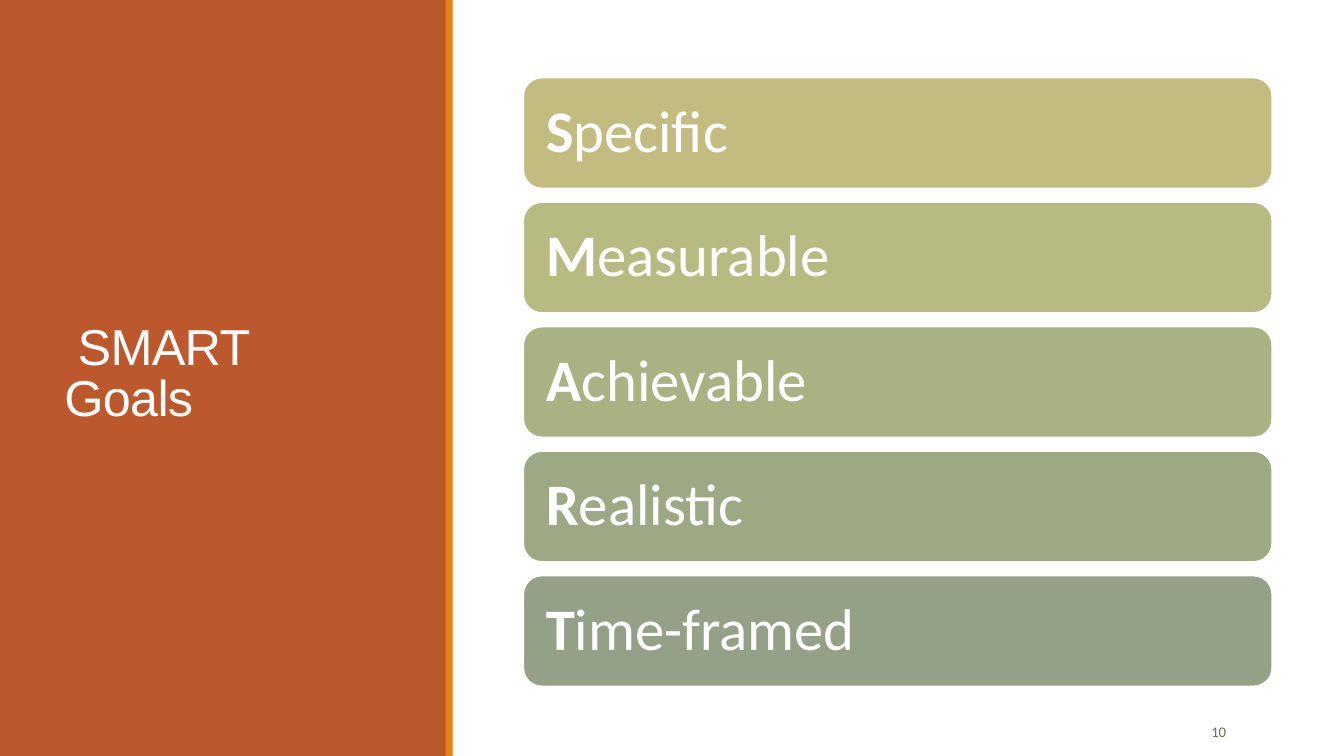
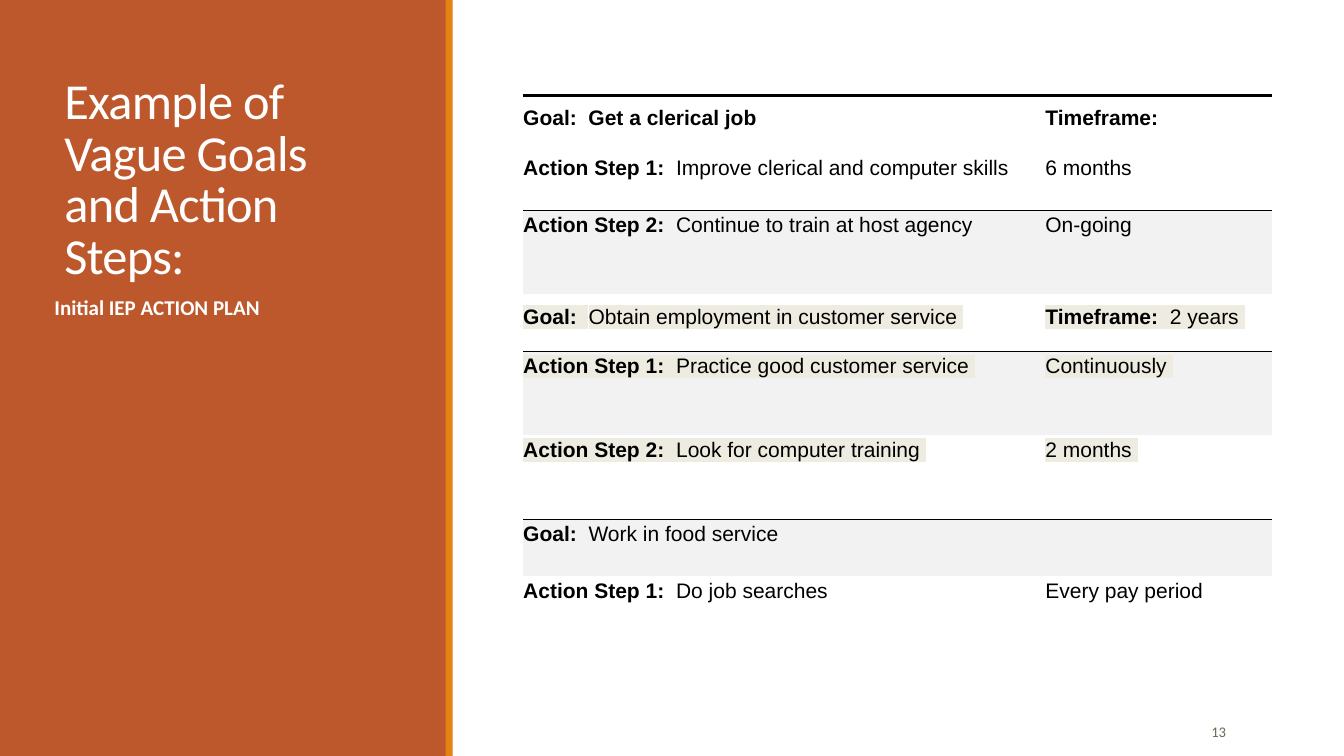
from dataclasses import dataclass

from lxml.etree import SubElement
from pptx import Presentation
from pptx.dml.color import RGBColor
from pptx.enum.shapes import MSO_SHAPE
from pptx.enum.text import MSO_ANCHOR, PP_ALIGN
from pptx.oxml import parse_xml
from pptx.oxml.ns import nsdecls, qn
from pptx.util import Inches, Pt


@dataclass(frozen=True)
class Theme:
    panel: str = "BD582C"
    accent: str = "E48312"
    white: str = "FFFFFF"
    black: str = "000000"
    page_number: str = "637052"
    shaded: str = "F2F2F2"
    highlight: str = "EEECE1"
    bars: tuple = ("C2BC80", "B7BA81", "A8B283", "9DA985", "94A088")
    body_font: str = "Calibri"
    plain_font: str = "Arial"
    title_size: float = 36
    bar_size: float = 42
    text_size: float = 15
    number_size: float = 10.5
    bar_line: float = 1.25
    thick_line: float = 2.25
    thin_line: float = 0.5


@dataclass(frozen=True)
class Box:
    """Left, top, width and height in hundredths of the slide's size."""
    left: float
    top: float
    width: float
    height: float

    def emu(self):
        return (int(self.left * COLUMN), int(self.top * ROW),
                int(self.width * COLUMN), int(self.height * ROW))


THEME = Theme()
SLIDE_WIDTH, SLIDE_HEIGHT = Inches(13.33), Inches(7.5)
COLUMN, ROW = SLIDE_WIDTH / 100, SLIDE_HEIGHT / 100

PANEL = Box(0, 0, 33.23, 100)
STRIPE = Box(33.16, 0, 0.53, 100)
FULL_TITLE = Box(4.05, 7.6, 25.28, 84.13)
TOP_TITLE = Box(4.05, 7.6, 25.28, 30.67)
SUBTITLE = Box(4.05, 38.67, 25.28, 48.67)
PAGE_NUMBER = Box(83.05, 94.13, 8.92, 5.33)
BAR_AREA = Box(38.93, 10.27, 55.73, 80.53)
TABLE_AREA = Box(38.93, 12.67, 55.73, 74.67)

GOAL_WORDS = ("Specific", "Measurable", "Achievable", "Realistic", "Time-framed")

SHORT, TALL = 0.57, 0.83
COLUMN_WEIGHTS = (5.18, 2.25)
# Row weight, anchor, highlighted, then (bold, regular) text for each cell
PLAN_ROWS = (
    (SHORT, MSO_ANCHOR.BOTTOM, False, ("Goal:  Get a clerical job", ""), ("Timeframe:", "")),
    (SHORT, MSO_ANCHOR.TOP, False,
     ("Action Step 1:  ", "Improve clerical and computer skills"), ("", "6 months")),
    (TALL, MSO_ANCHOR.TOP, False,
     ("Action Step 2:  ", "Continue to train at host agency"), ("", "On-going")),
    (SHORT, MSO_ANCHOR.BOTTOM, True,
     ("Goal:  ", "Obtain employment in customer service "), ("Timeframe:  ", "2 years ")),
    (TALL, MSO_ANCHOR.TOP, True,
     ("Action Step 1:  ", "Practice good customer service "), ("", "Continuously ")),
    (TALL, MSO_ANCHOR.TOP, True,
     ("Action Step 2:  ", "Look for computer training "), ("", "2 months ")),
    (SHORT, MSO_ANCHOR.TOP, False, ("Goal:  ", "Work in food service"), ("", "")),
    (TALL, MSO_ANCHOR.TOP, False, ("Action Step 1:  ", "Do job searches"), ("", "Every pay period")),
)


def color(value):
    return RGBColor.from_string(value)


def format_run(run, size, font, text_color, bold=False):
    run.font.size = Pt(size)
    run.font.name = font
    run.font.bold = bold
    run.font.color.rgb = color(text_color)


def add_runs(paragraph, parts, size, font, text_color):
    """Write a bold part followed by a regular part."""
    for text, bold in zip(parts, (True, False)):
        if text:
            run = paragraph.add_run()
            run.text = text
            format_run(run, size, font, text_color, bold)


def add_block(slide, box, fill, shape_type=MSO_SHAPE.RECTANGLE):
    shape = slide.shapes.add_shape(shape_type, *box.emu())
    shape.shadow.inherit = False
    shape.fill.solid()
    shape.fill.fore_color.rgb = color(fill)
    shape.line.fill.background()
    return shape


def add_text(slide, box, text, size, text_color=THEME.white, font=THEME.body_font,
             bold=False, anchor=MSO_ANCHOR.TOP, spacing=None):
    frame = slide.shapes.add_textbox(*box.emu()).text_frame
    frame.word_wrap = True
    frame.vertical_anchor = anchor
    frame.text = text
    paragraph = frame.paragraphs[0]
    paragraph.line_spacing = spacing
    format_run(paragraph.runs[0], size, font, text_color, bold)
    return frame


def add_frame(presentation, number):
    """Start a slide with the side panel, its stripe and the page number."""
    slide = presentation.slides.add_slide(presentation.slide_layouts[6])
    add_block(slide, PANEL, THEME.panel)
    add_block(slide, STRIPE, THEME.accent)
    frame = add_text(slide, PAGE_NUMBER, number, THEME.number_size,
                     THEME.page_number, anchor=MSO_ANCHOR.MIDDLE)
    frame.paragraphs[0].alignment = PP_ALIGN.RIGHT
    frame.paragraphs[0].space_after = Pt(6)
    return slide


def add_title(slide, box, text, font, anchor):
    frame = add_text(slide, box, text, THEME.title_size, font=font,
                     anchor=anchor, spacing=0.85)
    frame.paragraphs[0].runs[0].font._element.set("spc", "-50")


def add_bars(slide, area, words, gap=1.8):
    """Stack equal rounded bars, each with its initial in bold."""
    height = (area.height - gap * (len(words) - 1)) / len(words)
    for index, (word, fill) in enumerate(zip(words, THEME.bars)):
        box = Box(area.left, area.top + index * (height + gap), area.width, height)
        bar = add_block(slide, box, fill, MSO_SHAPE.ROUNDED_RECTANGLE)
        bar.line.color.rgb = color(THEME.white)
        bar.line.width = Pt(THEME.bar_line)
        frame = bar.text_frame
        frame.word_wrap = True
        frame.vertical_anchor = MSO_ANCHOR.MIDDLE
        frame.margin_left = frame.margin_right = Inches(0.17)
        paragraph = frame.paragraphs[0]
        paragraph.alignment = PP_ALIGN.LEFT
        paragraph.line_spacing = 0.9
        add_runs(paragraph, (word[0], word[1:]), THEME.bar_size,
                 THEME.body_font, THEME.white)


def set_borders(cell, top, bottom):
    """Draw the top and bottom lines of the given widths; zero means no line."""
    properties = cell._tc.get_or_add_tcPr()
    for side, width in (("L", 0), ("R", 0), ("T", top), ("B", bottom)):
        line = SubElement(properties, qn(f"a:ln{side}"), w=str(int(Pt(width))))
        if width:
            fill = SubElement(line, qn("a:solidFill"))
            SubElement(fill, qn("a:srgbClr"), val=THEME.black)
        else:
            SubElement(line, qn("a:noFill"))


def highlight_run(run):
    fill = run.font._element.find(qn("a:solidFill"))
    fill.addnext(parse_xml(f'<a:highlight {nsdecls("a")}>'
                           f'<a:srgbClr val="{THEME.highlight}"/></a:highlight>'))


def fill_cell(cell, parts, anchor, highlighted):
    cell.vertical_anchor = anchor
    cell.margin_left, cell.margin_right = 0, Inches(0.08)
    cell.margin_top, cell.margin_bottom = Inches(0.03), Inches(0.23)
    paragraph = cell.text_frame.paragraphs[0]
    add_runs(paragraph, parts, THEME.text_size, THEME.plain_font, THEME.black)
    if highlighted:
        for run in paragraph.runs:
            highlight_run(run)


def add_plan_table(slide, area, rows):
    left, top, width, height = area.emu()
    table = slide.shapes.add_table(len(rows), len(COLUMN_WEIGHTS),
                                   left, top, width, height).table
    table.first_row = table.horz_banding = False
    for column, weight in zip(table.columns, COLUMN_WEIGHTS):
        column.width = int(width * weight / sum(COLUMN_WEIGHTS))
    total_weight = sum(row[0] for row in rows)

    # Every second row after the first pair is shaded under a thin line
    shaded = [index > 0 and index % 2 == 0 for index in range(len(rows))]
    lines = [THEME.thin_line if flag else 0 for flag in shaded] + [0]
    lines[0] = THEME.thick_line
    for index, (weight, anchor, highlighted, *texts) in enumerate(rows):
        table.rows[index].height = int(height * weight / total_weight)
        for column_index, parts in enumerate(texts):
            cell = table.cell(index, column_index)
            fill_cell(cell, parts, anchor, highlighted)
            set_borders(cell, lines[index], lines[index + 1])
            if shaded[index]:
                cell.fill.solid()
                cell.fill.fore_color.rgb = color(THEME.shaded)
            else:
                cell.fill.background()


def build_smart_goals(presentation):
    slide = add_frame(presentation, "10")
    add_title(slide, FULL_TITLE, " SMART Goals", THEME.plain_font, MSO_ANCHOR.MIDDLE)
    add_bars(slide, BAR_AREA, GOAL_WORDS)


def build_vague_goals(presentation):
    slide = add_frame(presentation, "13")
    add_title(slide, TOP_TITLE, "Example of Vague Goals and Action Steps:",
              THEME.body_font, MSO_ANCHOR.BOTTOM)
    subtitle = add_text(slide, SUBTITLE, "Initial IEP ACTION PLAN",
                        THEME.text_size, bold=True, spacing=0.9)
    subtitle.margin_left = subtitle.margin_right = 0
    add_plan_table(slide, TABLE_AREA, PLAN_ROWS)


def main():
    presentation = Presentation()
    presentation.slide_width, presentation.slide_height = SLIDE_WIDTH, SLIDE_HEIGHT
    build_smart_goals(presentation)
    build_vague_goals(presentation)
    presentation.save("out.pptx")


if __name__ == "__main__":
    main()
